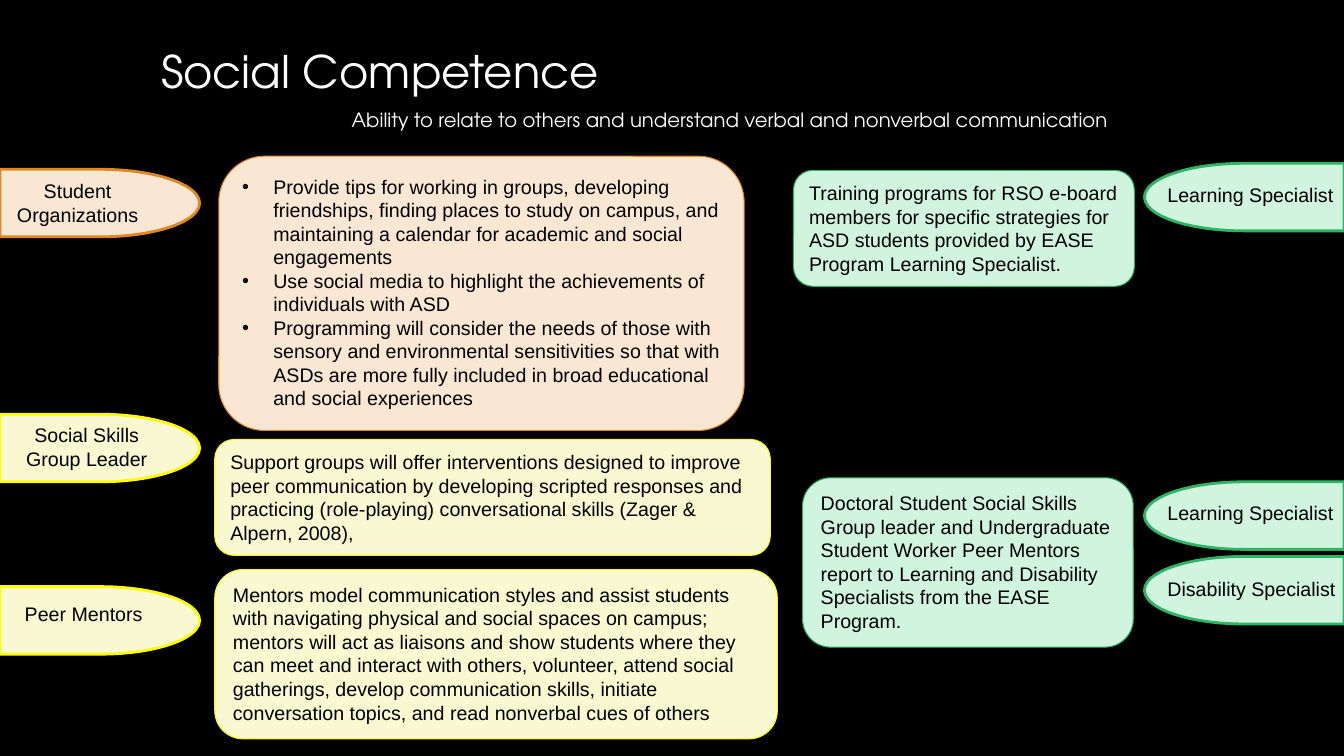
from dataclasses import dataclass

from lxml.etree import SubElement
from pptx import Presentation
from pptx.dml.color import RGBColor
from pptx.enum.shapes import MSO_SHAPE as Geo
from pptx.enum.text import MSO_ANCHOR as Anchor, MSO_AUTO_SIZE as AutoSize, PP_ALIGN as Align
from pptx.oxml.ns import qn
from pptx.util import Inches, Pt

COLORS = {
    "background": "000000", "heading": "FFFFFF", "body": "000000",
    "orange_fill": "F9E7D3", "orange_line": "DF8822",
    "yellow_fill": "F9F9D1", "yellow_line": "FFFF00",
    "green_fill": "D1F4DF", "green_line": "2CB663",
}
HEADING_FONT, BODY_FONT = "TeX Gyre Adventor", "Arial"
TAG_WIDTH, TAG_HEIGHT, SLIDE_WIDTH = 1.98, 0.67, 13.33
BULLET_INDENT = 0.31


@dataclass
class Box:
    left: float
    top: float
    width: float
    height: float


@dataclass
class RoleTag:
    theme: str
    top: float
    label: str
    label_box: Box
    on_right: bool = False


@dataclass
class Card:
    theme: str
    box: Box
    paragraphs: list[str]
    bulleted: bool = False


ROLE_TAGS = [
    RoleTag("orange", 1.68, "Student Organizations", Box(0.03, 1.73, 1.48, 0.57)),
    RoleTag("yellow", 4.11, "Social Skills Group Leader", Box(0, 4.15, 1.72, 0.57)),
    RoleTag("yellow", 5.82, "Peer Mentors", Box(-0.03, 5.92, 1.72, 0.34)),
    RoleTag("green", 1.62, "Learning Specialist", Box(11.48, 1.77, 1.91, 0.34), True),
    RoleTag("green", 4.78, "Learning Specialist", Box(11.48, 4.92, 1.91, 0.34), True),
    RoleTag("green", 5.52, "Disability Specialist", Box(11.48, 5.67, 1.88, 0.34), True),
]

CARDS = [
    Card("orange", Box(2.17, 1.55, 5.21, 2.72), [
        "Provide tips for working in groups, developing friendships, finding places to study "
        "on campus, and maintaining a calendar for academic and social engagements",
        "Use social media to highlight the achievements of individuals with ASD",
        "Programming will consider the needs of those with sensory and environmental "
        "sensitivities so that with ASDs are more fully included in broad educational and "
        "social experiences",
    ], bulleted=True),
    Card("green", Box(7.87, 1.69, 3.38, 1.15), [
        "Training programs for RSO e-board members for specific strategies for ASD students "
        "provided by EASE Program Learning Specialist.",
    ]),
    Card("yellow", Box(2.13, 4.36, 5.51, 1.15), [
        "Support groups will offer interventions designed to improve peer communication by "
        "developing scripted responses and practicing (role-playing) conversational skills "
        "(Zager & Alpern, 2008),",
    ]),
    Card("yellow", Box(2.13, 5.65, 5.58, 1.68), [
        "Mentors model communication styles and assist students with navigating physical and "
        "social spaces on campus; mentors will act as liaisons and show students where they "
        "can meet and interact with others, volunteer, attend social gatherings, develop "
        "communication skills, initiate conversation topics, and read nonverbal cues of others",
    ]),
    Card("green", Box(7.96, 4.74, 3.28, 1.68), [
        "Doctoral Student Social Skills Group leader and Undergraduate Student Worker Peer "
        "Mentors report to Learning and Disability Specialists from the EASE Program.",
    ]),
]


def rgb(name: str) -> RGBColor:
    return RGBColor.from_string(COLORS[name])


def emu(box: Box) -> list[int]:
    return [Inches(v) for v in (box.left, box.top, box.width, box.height)]


def add_bullet(p) -> None:
    pPr = p._p.get_or_add_pPr()
    pPr.set("marL", str(Inches(BULLET_INDENT)))
    pPr.set("indent", str(-Inches(BULLET_INDENT)))
    SubElement(pPr, qn("a:buFont"), typeface="Arial")
    SubElement(pPr, qn("a:buChar"), char="•")


def write(tf, paragraphs: list[str], font: str = BODY_FONT, size: int = 14,
          color: str = "body", align: Align = Align.LEFT, bulleted: bool = False) -> None:
    tf.text = "\n".join(paragraphs)
    for p in tf.paragraphs:
        p.alignment = align
        if bulleted:
            add_bullet(p)
        for r in p.runs:
            r.font.name, r.font.size = font, Pt(size)
            r.font.color.rgb = rgb(color)


def add_text(s, box: Box, text: str, wrap: bool = True, **style):
    tf = s.shapes.add_textbox(*emu(box)).text_frame
    tf.word_wrap = wrap
    tf.auto_size = AutoSize.SHAPE_TO_FIT_TEXT
    write(tf, [text], **style)
    return tf


def add_themed_shape(s, geo: Geo, box: Box, theme: str, line_width: float):
    sp = s.shapes.add_shape(geo, *emu(box))
    sp.shadow.inherit = False
    sp.fill.solid()
    sp.fill.fore_color.rgb = rgb(f"{theme}_fill")
    sp.line.color.rgb = rgb(f"{theme}_line")
    sp.line.width = Pt(line_width)
    return sp


def add_role_tag(s, tag: RoleTag) -> None:
    left = SLIDE_WIDTH - TAG_WIDTH if tag.on_right else 0
    box = Box(left, tag.top, TAG_WIDTH, TAG_HEIGHT)
    sp = add_themed_shape(s, Geo.FLOWCHART_DELAY, box, tag.theme, 2)
    sp.rotation = 180 if tag.on_right else 0
    add_text(s, tag.label_box, tag.label, wrap=not tag.on_right,
             align=Align.LEFT if tag.on_right else Align.CENTER)


def add_card(s, card: Card) -> None:
    sp = add_themed_shape(s, Geo.ROUNDED_RECTANGLE, card.box, card.theme, 0.75)
    tf = sp.text_frame
    tf.word_wrap = True
    tf.auto_size = AutoSize.SHAPE_TO_FIT_TEXT
    tf.vertical_anchor = Anchor.TOP
    write(tf, card.paragraphs, bulleted=card.bulleted)


def main() -> None:
    prs = Presentation()
    prs.slide_width, prs.slide_height = Inches(SLIDE_WIDTH), Inches(7.5)
    s = prs.slides.add_slide(prs.slide_layouts[6])
    s.background.fill.solid()
    s.background.fill.fore_color.rgb = rgb("background")

    # Title and subtitle
    tf = add_text(s, Box(1.5, 0.39, 10.5, 0.68), "Social Competence",
                  font=HEADING_FONT, size=32, color="heading")
    tf.auto_size = AutoSize.NONE
    tf.vertical_anchor = Anchor.MIDDLE
    tf.margin_left = tf.margin_top = tf.margin_right = tf.margin_bottom = Inches(0.1)
    tf.paragraphs[0].line_spacing = 0.9
    add_text(s, Box(3.39, 1.02, 9.97, 0.34),
             "Ability to relate to others and understand verbal and nonverbal communication",
             font=HEADING_FONT, color="heading")

    # Roles along both edges
    for tag in ROLE_TAGS:
        add_role_tag(s, tag)

    # Descriptions of each role
    for card in CARDS:
        add_card(s, card)

    prs.save("out.pptx")


if __name__ == "__main__":
    main()
